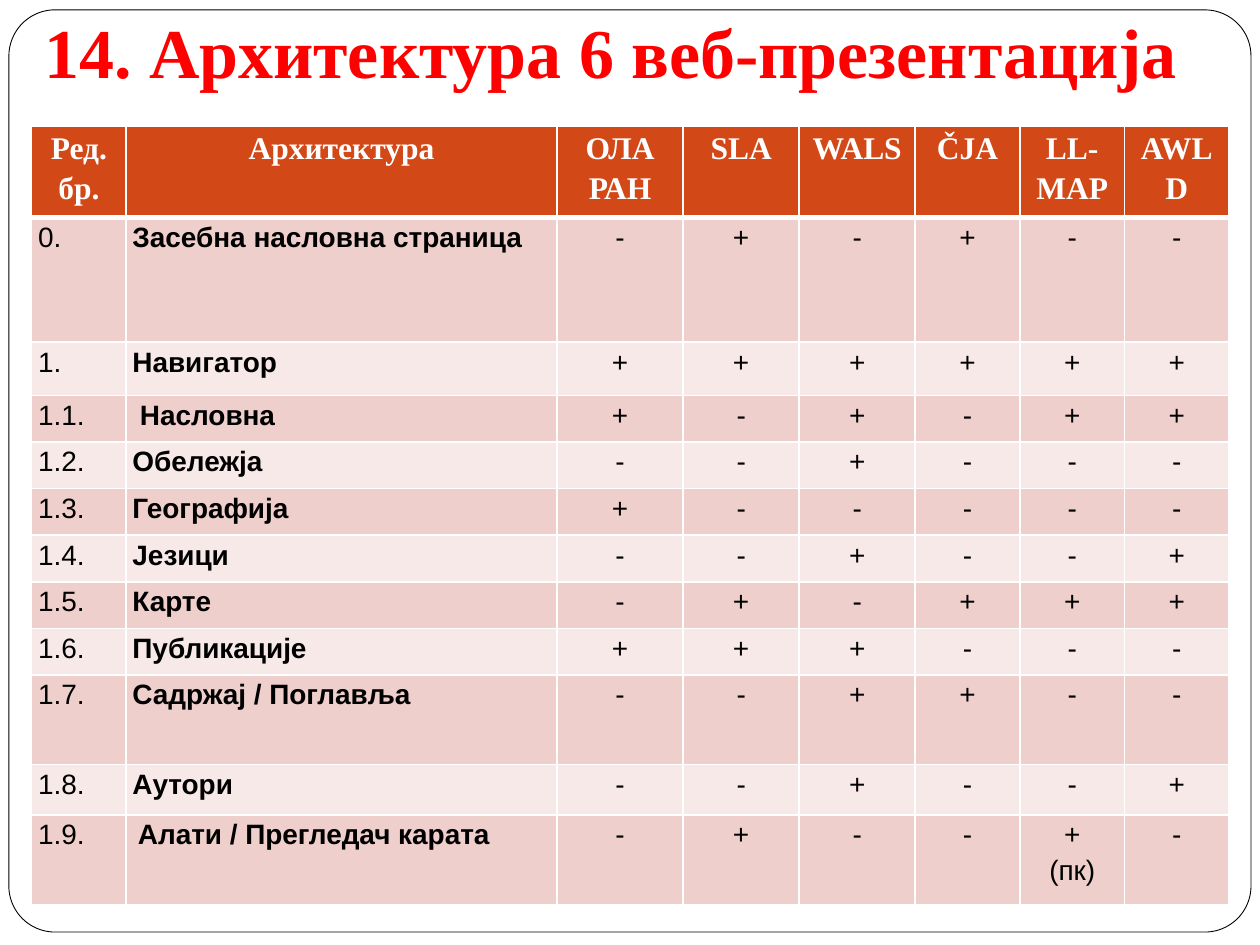
from dataclasses import dataclass

from lxml.etree import SubElement
from pptx import Presentation
from pptx.dml.color import RGBColor
from pptx.enum.shapes import MSO_SHAPE
from pptx.enum.text import MSO_ANCHOR, MSO_AUTO_SIZE, PP_ALIGN
from pptx.oxml.ns import qn
from pptx.util import Cm, Pt

COLORS = {
    "title": "FF0000",
    "header": "D34817",
    "dark_band": "EFCFCC",
    "light_band": "F7E9E8",
    "white": "FFFFFF",
    "black": "000000",
}
HEADING_FONT = "Times New Roman"
BODY_FONT = "Arial"
COLUMN_WIDTHS = (1.9, 8.69, 2.54, 2.34, 2.34, 2.11, 2.11, 2.1)
HEADER_HEIGHT = 1.85
HEADERS = ("Ред.\nбр.", "Архитектура", "ОЛА\nРАН", "SLA", "WALS", "ČJA", "LL-MAP", "AWLD")


@dataclass(frozen=True)
class Feature:
    number: str
    label: str
    marks: str
    height: float = 0.94
    indent: float = 0


@dataclass(frozen=True)
class CellStyle:
    font: str
    size: int
    color: str
    fill: str
    bold: bool = False
    centered: bool = True
    indent: float = 0
    bottom_border: int = 1


FEATURES = (
    Feature("0.", "Засебна насловна страница", "- + - + - -", 2.51),
    Feature("1.", "Навигатор", "+ + + + + +", 1.07),
    Feature("1.1.", "Насловна", "+ - + - + +", indent=0.15),
    Feature("1.2.", "Обележја", "- - + - - -"),
    Feature("1.3.", "Географија", "+ - - - - -"),
    Feature("1.4.", "Jезици", "- - + - - +"),
    Feature("1.5.", "Карте", "- + - + + +"),
    Feature("1.6.", "Публикације", "+ + + - - -"),
    Feature("1.7.", "Садржај / Поглавља", "- - + + - -", 1.8),
    Feature("1.8.", "Аутори", "- - + - - +", 1.02),
    Feature("1.9.", "Алати / Прегледач карата", "- + - - +\n(пк) -", 1.8, 0.11),
)


def rgb(name: str) -> RGBColor:
    return RGBColor.from_string(COLORS[name])


def style_font(font, name: str, size: int, color: str, bold: bool) -> None:
    font.name = name
    font.size = Pt(size)
    font.bold = bold
    font.color.rgb = rgb(color)


def add_borders(cell, widths: dict[str, int]) -> None:
    properties = cell._tc.get_or_add_tcPr()
    for side, width in widths.items():
        line = SubElement(properties, qn(f"a:ln{side}"), w=str(Pt(width)))
        fill = SubElement(line, qn("a:solidFill"))
        SubElement(fill, qn("a:srgbClr"), val=COLORS["white"])


def write_cell(cell, text: str, style: CellStyle, top_border: int = 1) -> None:
    add_borders(cell, {"L": 1, "R": 1, "T": top_border, "B": style.bottom_border})
    cell.fill.solid()
    cell.fill.fore_color.rgb = rgb(style.fill)
    cell.margin_left = Cm(0.13 + style.indent)
    cell.margin_right = Cm(0.13)
    cell.margin_top = cell.margin_bottom = 0
    cell.text_frame.text = text
    for para in cell.text_frame.paragraphs:
        para.alignment = PP_ALIGN.CENTER if style.centered else PP_ALIGN.LEFT
        para.line_spacing = 1.15
        for span in para.runs:
            style_font(span.font, style.font, style.size, style.color, style.bold)


def format_title(title) -> None:
    title.left, title.top, title.width, title.height = Cm(0.64), 0, Cm(23.93), Cm(2.11)
    frame = title.text_frame
    frame.text = "14. Архитектура 6 веб-презентација"
    frame.auto_size = MSO_AUTO_SIZE.NONE
    frame.word_wrap = True
    frame.vertical_anchor = MSO_ANCHOR.BOTTOM
    frame.margin_left = frame.margin_right = frame.margin_bottom = Cm(0.25)
    frame.margin_top = Cm(0.13)
    para = frame.paragraphs[0]
    para.alignment = PP_ALIGN.LEFT
    style_font(para.runs[0].font, HEADING_FONT, 40, "title", True)


def add_page_frame(page) -> None:
    """Place the rounded outline behind the title."""
    box = page.shapes.add_shape(
        MSO_SHAPE.ROUNDED_RECTANGLE, Cm(0.18), Cm(0.2), Cm(25.04), Cm(18.59)
    )
    box.adjustments[0] = 0.05
    box.shadow.inherit = False
    box.fill.solid()
    box.fill.fore_color.rgb = rgb("white")
    box.line.color.rgb = rgb("black")
    box.line.width = Pt(0.5)
    page.shapes.title.element.addprevious(box.element)


def add_feature_table(page) -> None:
    heights = (HEADER_HEIGHT, *(feature.height for feature in FEATURES))
    table = page.shapes.add_table(
        len(heights), len(COLUMN_WIDTHS), Cm(0.64), Cm(2.54),
        Cm(sum(COLUMN_WIDTHS)), Cm(sum(heights)),
    ).table
    table.horz_banding = False
    for column, width in zip(table.columns, COLUMN_WIDTHS):
        column.width = Cm(width)
    for row, height in zip(table.rows, heights):
        row.height = Cm(height)

    header = CellStyle(HEADING_FONT, 18, "white", "header", bold=True, bottom_border=3)
    for column, text in enumerate(HEADERS):
        write_cell(table.cell(0, column), text, header)

    for row, feature in enumerate(FEATURES, start=1):
        band = "dark_band" if row % 2 else "light_band"
        base = (BODY_FONT, 16, "black", band)
        number = CellStyle(*base, centered=False)
        label = CellStyle(*base, bold=True, centered=False, indent=feature.indent)
        mark = CellStyle(*base)
        texts = (feature.number, feature.label, *feature.marks.split(" "))
        styles = (number, label) + (mark,) * (len(texts) - 2)
        for column, (text, style) in enumerate(zip(texts, styles)):
            write_cell(table.cell(row, column), text, style, 3 if row == 1 else 1)


def main() -> None:
    deck = Presentation()
    deck.slide_width, deck.slide_height = Cm(25.4), Cm(19.05)
    page = deck.slides.add_slide(deck.slide_layouts[5])
    format_title(page.shapes.title)
    add_page_frame(page)
    add_feature_table(page)
    deck.save("out.pptx")


if __name__ == "__main__":
    main()
